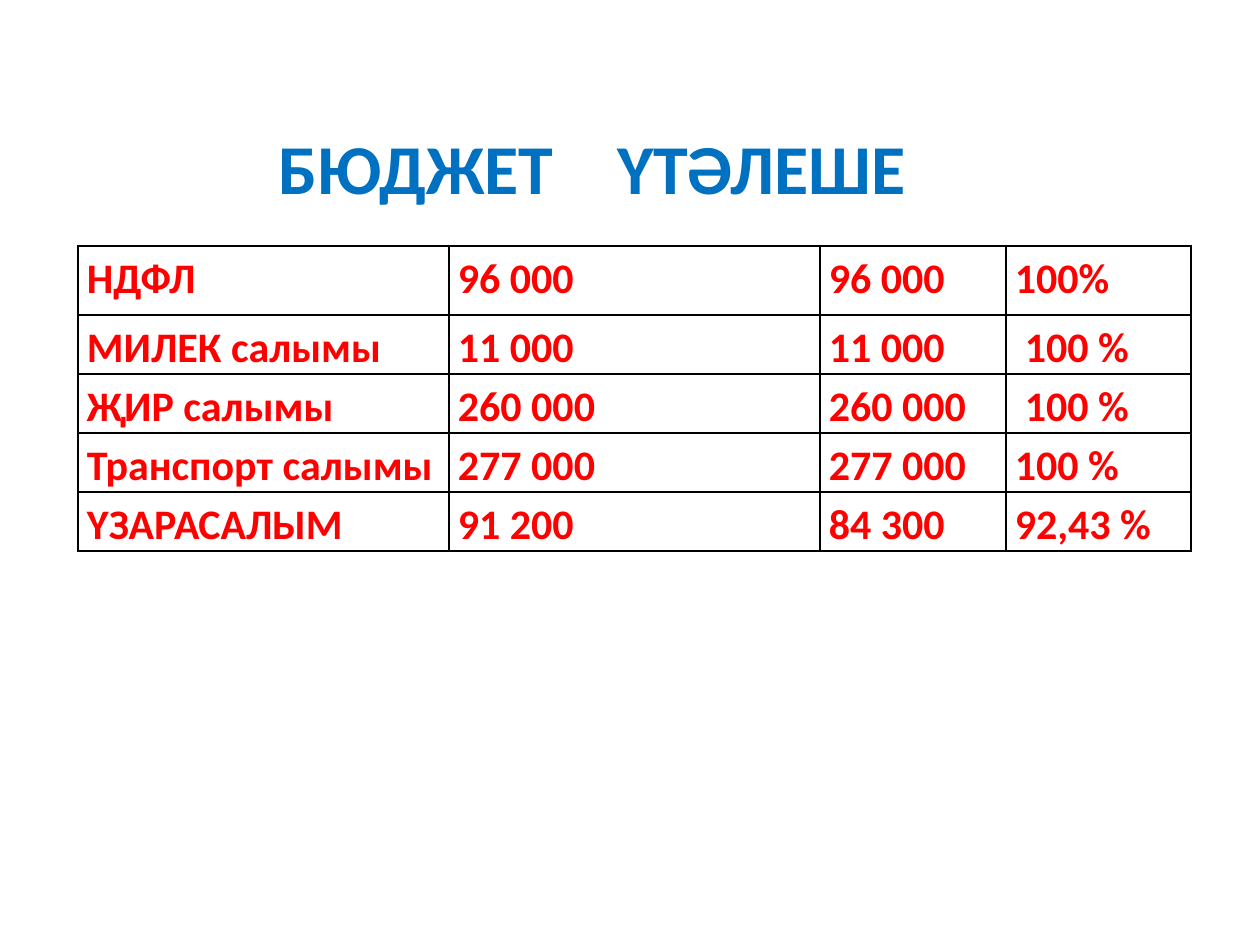
from lxml import etree
from pptx import Presentation
from pptx.dml.color import RGBColor
from pptx.enum.text import MSO_ANCHOR as Anchor, MSO_AUTO_SIZE as AutoSize
from pptx.oxml.ns import qn
from pptx.util import Emu, Pt

PX = 914400 // 126
COLORS = {"title": "0070C0", "entry": "FF0000", "border": "000000", "paper": "FFFFFF"}
FONT = "Calibri"

COLUMN_WIDTHS = [371, 371, 186, 185]
ROW_HEIGHTS = [69, 59, 59, 59, 59]
CELL_INSET = 9
SPACE_INDENT = 10
BUDGET = [
    ["НДФЛ", "96 000", "96 000", "100%"],
    ["МИЛЕК салымы", "11 000", "11 000", "100 %"],
    ["ҖИР салымы", "260 000", "260 000", "100 %"],
    ["Транспорт салымы", "277 000", "277 000", "100 %"],
    ["ҮЗАРАСАЛЫМ", "91 200", "84 300", "92,43 %"],
]
INDENTED = {(1, 3), (2, 3)}


def px(length):
    return Emu(length * PX)


def rgb(name):
    return RGBColor.from_string(COLORS[name])


def write(para, text, size, color):
    span = para.add_run()
    span.text = text
    span.font.name = FONT
    span.font.size = Pt(size)
    span.font.bold = True
    span.font.color.rgb = rgb(color)


def add_tab_stop(para, position):
    stops = etree.SubElement(para._p.get_or_add_pPr(), qn("a:tabLst"))
    etree.SubElement(stops, qn("a:tab"), pos=str(px(position)), algn="l")


def add_title(page, text, left, top, width, height, tab):
    box = page.shapes.add_textbox(px(left), px(top), px(width), px(height))
    frame = box.text_frame
    frame.word_wrap = True
    frame.auto_size = AutoSize.SHAPE_TO_FIT_TEXT
    frame.vertical_anchor = Anchor.MIDDLE
    para = frame.paragraphs[0]
    add_tab_stop(para, tab)
    write(para, text, size=40, color="title")


def set_borders(cell):
    props = cell._tc.get_or_add_tcPr()
    for index, side in enumerate(("a:lnL", "a:lnR", "a:lnT", "a:lnB")):
        line = etree.Element(qn(side), w=str(Pt(1)))
        fill = etree.SubElement(line, qn("a:solidFill"))
        etree.SubElement(fill, qn("a:srgbClr"), val=COLORS["border"])
        props.insert(index, line)  # borders come before the cell fill


def fill_cell(cell, text, indent=0):
    cell.fill.solid()
    cell.fill.fore_color.rgb = rgb("paper")
    cell.margin_left = px(CELL_INSET + indent)
    cell.margin_right = px(CELL_INSET)
    cell.margin_top = cell.margin_bottom = 0
    para = cell.text_frame.paragraphs[0]
    para.line_spacing = 1.15
    write(para, text, size=24, color="entry")
    set_borders(cell)


def add_budget_table(page, left, top):
    frame = page.shapes.add_table(
        len(ROW_HEIGHTS), len(COLUMN_WIDTHS), px(left), px(top),
        px(sum(COLUMN_WIDTHS)), px(sum(ROW_HEIGHTS)))
    table = frame.table
    table.first_row = table.horz_banding = False
    for column, width in zip(table.columns, COLUMN_WIDTHS):
        column.width = px(width)
    for row, height in zip(table.rows, ROW_HEIGHTS):
        row.height = px(height)
    for r, entries in enumerate(BUDGET):
        for c, text in enumerate(entries):
            indent = SPACE_INDENT if (r, c) in INDENTED else 0
            fill_cell(table.cell(r, c), text, indent)


def main():
    deck = Presentation()
    deck.slide_width, deck.slide_height = px(1260), px(945)
    page = deck.slides.add_slide(deck.slide_layouts[6])

    # Budget figures
    add_budget_table(page, left=78, top=246)

    # Heading, its two words set apart by a tab
    add_title(page, "БЮДЖЕТ\tҮТӘЛЕШЕ", left=266, top=118, width=689, height=97, tab=339)

    deck.save("out.pptx")


if __name__ == "__main__":
    main()
